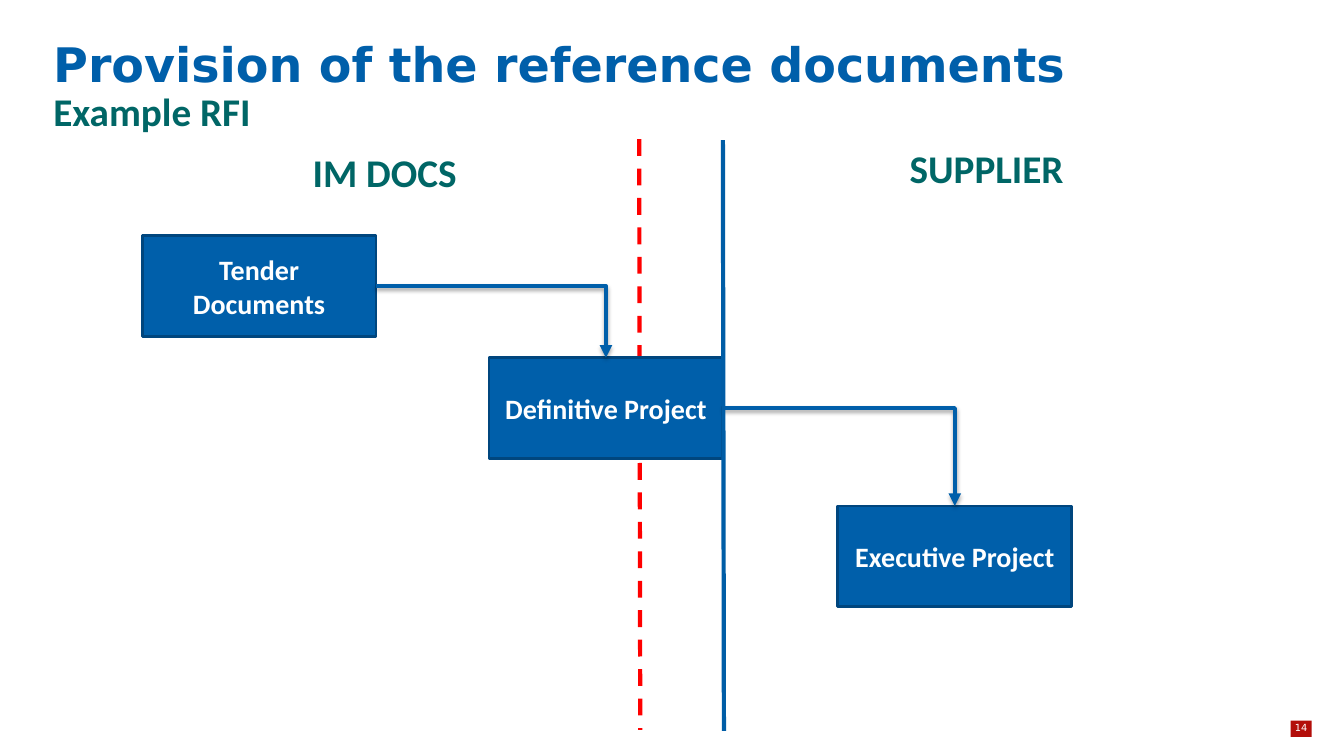
from dataclasses import dataclass

from lxml.etree import SubElement
from pptx import Presentation
from pptx.dml.color import RGBColor
from pptx.enum.dml import MSO_LINE
from pptx.enum.shapes import MSO_CONNECTOR, MSO_SHAPE
from pptx.enum.text import MSO_ANCHOR, PP_ALIGN
from pptx.oxml.ns import qn
from pptx.util import Pt

PX = 9144
SLIDE_SIZE = (1333, 750)
STEP_SIZE = (232, 100)
STEPS = [("Tender Documents", 141, 234), ("Definitive Project", 485, 355), ("Executive Project", 831, 502)]
PAGE_MARK = (1280, 715, 21, 16)
RED_DIVIDER = (634, 138, 635, 724)
BLUE_DIVIDER = (717, 139, 718, 725)


@dataclass(frozen=True)
class Theme:
    blue: str = "005FAA"
    divider_blue: str = "005DA6"
    outline: str = "00467E"
    green: str = "006666"
    red: str = "FF0000"
    mark: str = "B30E0A"
    white: str = "FFFFFF"
    shadow: str = "000000"
    title_font: str = "DejaVu Sans"
    body_font: str = "Calibri"
    title_size: int = 34
    heading_size: int = 28
    step_size: int = 20
    page_size: int = 7
    outline_width: int = 2
    line_width: int = 3


THEME = Theme()
TITLE_STYLE = (THEME.title_font, THEME.title_size, THEME.blue, True)
HEADING_STYLE = (THEME.body_font, THEME.heading_size, THEME.green, True)
STEP_STYLE = (THEME.body_font, THEME.step_size, THEME.white, True)
PAGE_STYLE = (THEME.title_font, THEME.page_size, THEME.white, False)
PAGE_NUMBER = ("14", (1259, 711, 63, 52), PP_ALIGN.CENTER, PAGE_STYLE)
LABELS = [
    ("Provision of the reference documents", (43, 30, 1026, 85), PP_ALIGN.LEFT, TITLE_STYLE),
    ("SUPPLIER", (782, 138, 393, 57), PP_ALIGN.CENTER, HEADING_STYLE),
    ("Example RFI", (43, 82, 458, 57), PP_ALIGN.LEFT, HEADING_STYLE),
    ("IM DOCS", (185, 142, 393, 57), PP_ALIGN.CENTER, HEADING_STYLE),
]


def emu(lengths):
    return [length * PX for length in lengths]


def color(value):
    return RGBColor.from_string(value)


def write(shape, text, align, style):
    name, size, ink, bold = style
    shape.text_frame.word_wrap = True
    shape.text_frame.text = text
    para = shape.text_frame.paragraphs[0]
    para.alignment = align
    span = para.runs[0]
    span.font.name = name
    span.font.size = Pt(size)
    span.font.bold = bold
    span.font.color.rgb = color(ink)


def add_label(page, text, place, align, style):
    write(page.shapes.add_textbox(*emu(place)), text, align, style)


def add_box(page, place, fill):
    box = page.shapes.add_shape(MSO_SHAPE.RECTANGLE, *emu(place))
    box.shadow.inherit = False
    box.fill.solid()
    box.fill.fore_color.rgb = color(fill)
    box.line.fill.background()
    return box


def add_step(page, text, left, top):
    box = add_box(page, (left, top, *STEP_SIZE), THEME.blue)
    box.line.color.rgb = color(THEME.outline)
    box.line.width = Pt(THEME.outline_width)
    box.text_frame.vertical_anchor = MSO_ANCHOR.MIDDLE
    write(box, text, PP_ALIGN.CENTER, STEP_STYLE)
    return box


def add_line(page, kind, ends, ink):
    line = page.shapes.add_connector(kind, *ends)
    line.line.color.rgb = color(ink)
    line.line.width = Pt(THEME.line_width)
    effects = SubElement(line._element.spPr, qn("a:effectLst"))
    return line, effects


def add_arrow(page, source, target):
    ends = (source.left + source.width, source.top + source.height // 2,
            target.left + target.width // 2, target.top)
    arrow, effects = add_line(page, MSO_CONNECTOR.ELBOW, ends, THEME.blue)
    arrow.begin_connect(source, 3)
    arrow.end_connect(target, 0)
    properties = arrow._element.spPr
    properties.find(qn("a:prstGeom")).set("prst", "bentConnector2")
    SubElement(properties.find(qn("a:ln")), qn("a:tailEnd"), type="triangle")
    shadow = SubElement(effects, qn("a:outerShdw"), blurRad="40000", dist="23000",
                        dir="5400000", rotWithShape="0")
    shade = SubElement(shadow, qn("a:srgbClr"), val=THEME.shadow)
    SubElement(shade, qn("a:alpha"), val="35000")


def main():
    deck = Presentation()
    deck.slide_width, deck.slide_height = emu(SLIDE_SIZE)
    page = deck.slides.add_slide(deck.slide_layouts[6])
    add_box(page, PAGE_MARK, THEME.mark)
    add_label(page, *PAGE_NUMBER)
    red_divider, _ = add_line(page, MSO_CONNECTOR.STRAIGHT, emu(RED_DIVIDER), THEME.red)
    red_divider.line.dash_style = MSO_LINE.DASH
    boxes = [add_step(page, *step) for step in STEPS]
    for source, target in zip(boxes, boxes[1:]):
        add_arrow(page, source, target)
    add_line(page, MSO_CONNECTOR.STRAIGHT, emu(BLUE_DIVIDER), THEME.divider_blue)
    for label in LABELS:
        add_label(page, *label)
    deck.save("out.pptx")


if __name__ == "__main__":
    main()
